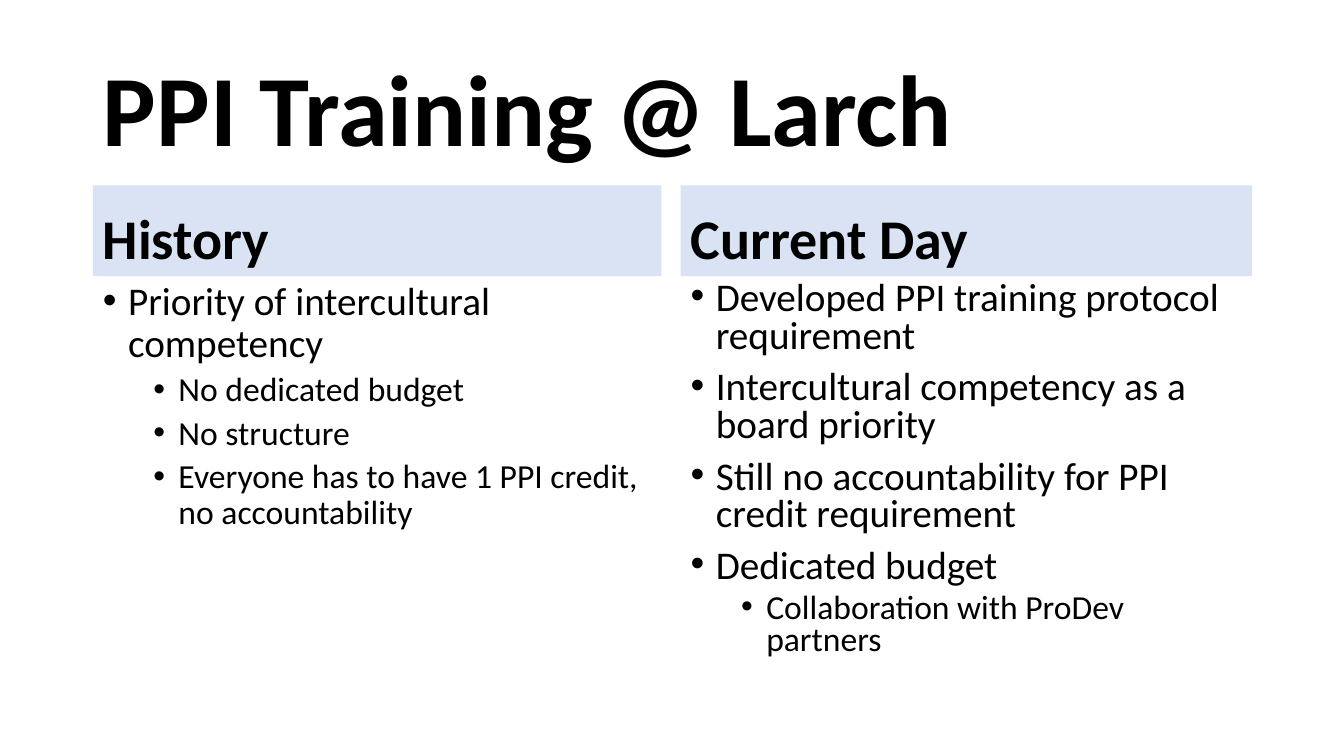
from lxml import etree
from pptx import Presentation
from pptx.dml.color import RGBColor
from pptx.enum.text import MSO_ANCHOR as Anchor, MSO_AUTO_SIZE as AutoSize, PP_ALIGN as Align
from pptx.oxml.ns import qn
from pptx.util import Inches, Pt


def color(hex_code):
    return RGBColor.from_string(hex_code)


def fill_box(box, place, anchor, lines, size, bold=False, spacing=0.9, bullets=False):
    """Place a placeholder and write its (level, text) lines."""
    box.left, box.top, box.width, box.height = map(Inches, place)
    frame = box.text_frame
    frame.auto_size = AutoSize.NONE
    frame.word_wrap = True
    frame.vertical_anchor = anchor
    for number, (level, text) in enumerate(lines):
        para = frame.add_paragraph() if number else frame.paragraphs[0]
        span = para.add_run()
        span.text = text
        para_format = {"level": level, "alignment": Align.LEFT, "line_spacing": spacing,
                       "space_before": Pt(5 if level else 10)}
        for name, value in para_format.items():
            setattr(para, name, value)
        font_format = {"name": "Calibri", "size": Pt(size - 4 * level), "bold": bold}
        for name, value in font_format.items():
            setattr(span.font, name, value)
        span.font.color.rgb = color("000000")
        if bullets:
            props = para._p.get_or_add_pPr()
            props.set("marL", str(Inches(0.25 + 0.5 * level)))
            props.set("indent", str(Inches(-0.25)))
            etree.SubElement(props, qn("a:buFont")).set("typeface", "Arial")
            etree.SubElement(props, qn("a:buChar")).set("char", "•")


deck = Presentation()
deck.slide_width, deck.slide_height = Inches(13.33), Inches(7.5)
page = deck.slides.add_slide(deck.slide_layouts.get_by_name("Comparison"))
holders = {holder.placeholder_format.idx: holder for holder in page.placeholders}

# Title
fill_box(holders[0], (0.92, 0.4, 11.5, 1.45), Anchor.MIDDLE,
         [(0, "PPI Training @ Larch")], 72, bold=True)
holders[0].text_frame.paragraphs[0].space_before = Pt(0)

# Columns: heading placeholder, left, width, line spacing, heading, list
columns = [
    (1, 0.92, 5.64, 0.9, "History", [
        (0, "Priority of intercultural competency"),
        (1, "No dedicated budget"),
        (1, "No structure"),
        (1, "Everyone has to have 1 PPI credit, no accountability"),
    ]),
    (3, 6.75, 5.67, 0.8, "Current Day", [
        (0, "Developed PPI training protocol requirement"),
        (0, "Intercultural competency as a board priority"),
        (0, "Still no accountability for PPI credit requirement"),
        (0, "Dedicated budget"),
        (1, "Collaboration with ProDev partners"),
    ]),
]
for index, left, width, spacing, heading, points in columns:
    band = holders[index]
    fill_box(band, (left, 1.84, width, 0.9), Anchor.BOTTOM, [(0, heading)], 40, bold=True)
    band.fill.solid()
    band.fill.fore_color.rgb = color("DAE3F3")
    fill_box(holders[index + 1], (left, 2.74, width, 4.03), Anchor.TOP, points, 28,
             spacing=spacing, bullets=True)

deck.save("out.pptx")
